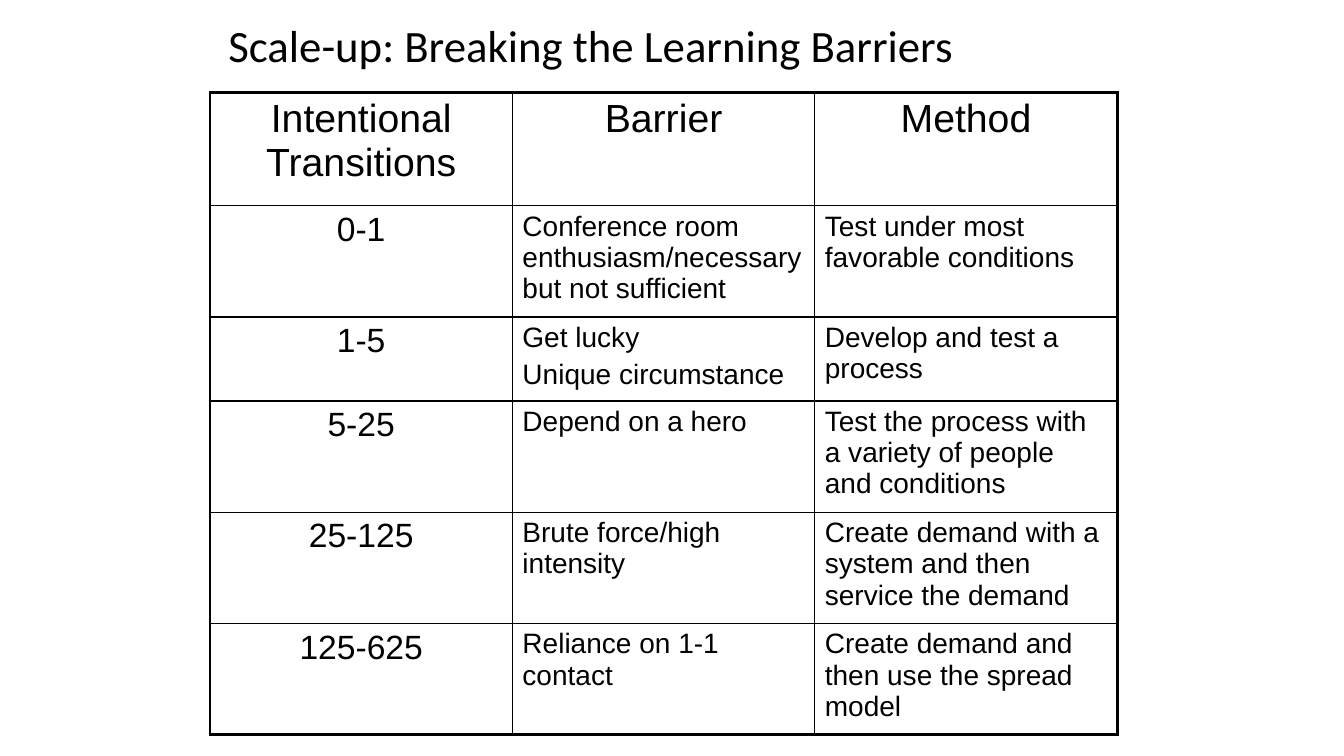
import dataclasses

import lxml.etree
import pptx
import pptx.dml.color
import pptx.enum.text
import pptx.oxml.ns
import pptx.util

INK = {"text": "000000", "rule": "000000"}
ALIGN = pptx.enum.text.PP_ALIGN
WIDE, TALL = 13.33, 7.5
COLS, ROWS = 160, 90  # layout grid of the slide
THIN, THICK = 1, 2.25


@dataclasses.dataclass
class Row:
    tall: float  # grid rows
    cells: tuple[str, str, str]


HEAD = Row(13.5, ("Intentional Transitions", "Barrier", "Method"))
STEPS = [
    Row(13.25, ("0-1", "Conference room enthusiasm/necessary but not sufficient",
                "Test under most favorable conditions")),
    Row(10, ("1-5", "Get lucky\nUnique circumstance", "Develop and test a process")),
    Row(13.25, ("5-25", "Depend on a hero",
                "Test the process with a variety of people and conditions")),
    Row(13.25, ("25-125", "Brute force/high intensity",
                "Create demand with a system and then service the demand")),
    Row(13.25, ("125-625", "Reliance on 1-1 contact",
                "Create demand and then use the spread model")),
]


def across(count: float) -> int:
    return pptx.util.Inches(count * WIDE / COLS)


def down(count: float) -> int:
    return pptx.util.Inches(count * TALL / ROWS)


def style(para, font: str, size: float) -> None:
    for run in para.runs:
        run.font.name = font
        run.font.size = pptx.util.Pt(size)
        run.font.bold = False
        run.font.color.rgb = pptx.dml.color.RGBColor.from_string(INK["text"])


def edge(cell, sides: dict[str, float]) -> None:
    """Draw the borders of a cell; they stand before its fill."""
    props = cell._tc.get_or_add_tcPr()
    name = pptx.oxml.ns.qn
    for spot, (side, width) in enumerate(sides.items()):
        line = lxml.etree.Element(name(f"a:ln{side}"), w=str(pptx.util.Pt(width)))
        fill = lxml.etree.SubElement(line, name("a:solidFill"))
        lxml.etree.SubElement(fill, name("a:srgbClr"), val=INK["rule"])
        props.insert(spot, line)


def title(slide, text: str) -> None:
    box = slide.shapes.add_textbox(across(26), 0, across(108), down(11.4))
    frame = box.text_frame
    frame.word_wrap = True
    frame.vertical_anchor = pptx.enum.text.MSO_ANCHOR.MIDDLE
    frame.text = text
    para = frame.paragraphs[0]
    para.line_spacing = 0.9
    style(para, "Calibri", 32)


def chart(slide, rows: list[Row]) -> None:
    """Draw the table of transitions, barriers and methods."""
    wide = len(HEAD.cells)
    frame = slide.shapes.add_table(len(rows), wide, across(25), down(11),
                                   across(108), down(sum(row.tall for row in rows)))
    table = frame.table
    table.first_row = table.horz_banding = False
    for col in table.columns:
        col.width = across(108 / wide)

    last = len(rows) - 1
    for i, row in enumerate(rows):
        table.rows[i].height = down(row.tall)
        for j, text in enumerate(row.cells):
            cell = table.cell(i, j)
            cell.fill.background()
            # Heavy outer frame, fine inner rules
            edge(cell, {"L": THICK if j == 0 else THIN,
                        "R": THICK if j == wide - 1 else THIN,
                        "T": THICK if i == 0 else THIN,
                        "B": THICK if i == last else THIN})
            cell.text_frame.text = text
            size = 28 if i == 0 else 24 if j == 0 else 20
            for para in cell.text_frame.paragraphs:
                para.alignment = ALIGN.CENTER if i == 0 or j == 0 else ALIGN.LEFT
                para.space_before = pptx.util.Pt(round(size * 0.22, 1))
                style(para, "Arial", size)


def main() -> None:
    deck = pptx.Presentation()
    deck.slide_width = across(COLS)
    deck.slide_height = down(ROWS)
    slide = deck.slides.add_slide(deck.slide_layouts[6])
    title(slide, "Scale-up: Breaking the Learning Barriers")
    chart(slide, [HEAD, *STEPS])
    deck.save("out.pptx")


if __name__ == "__main__":
    main()
